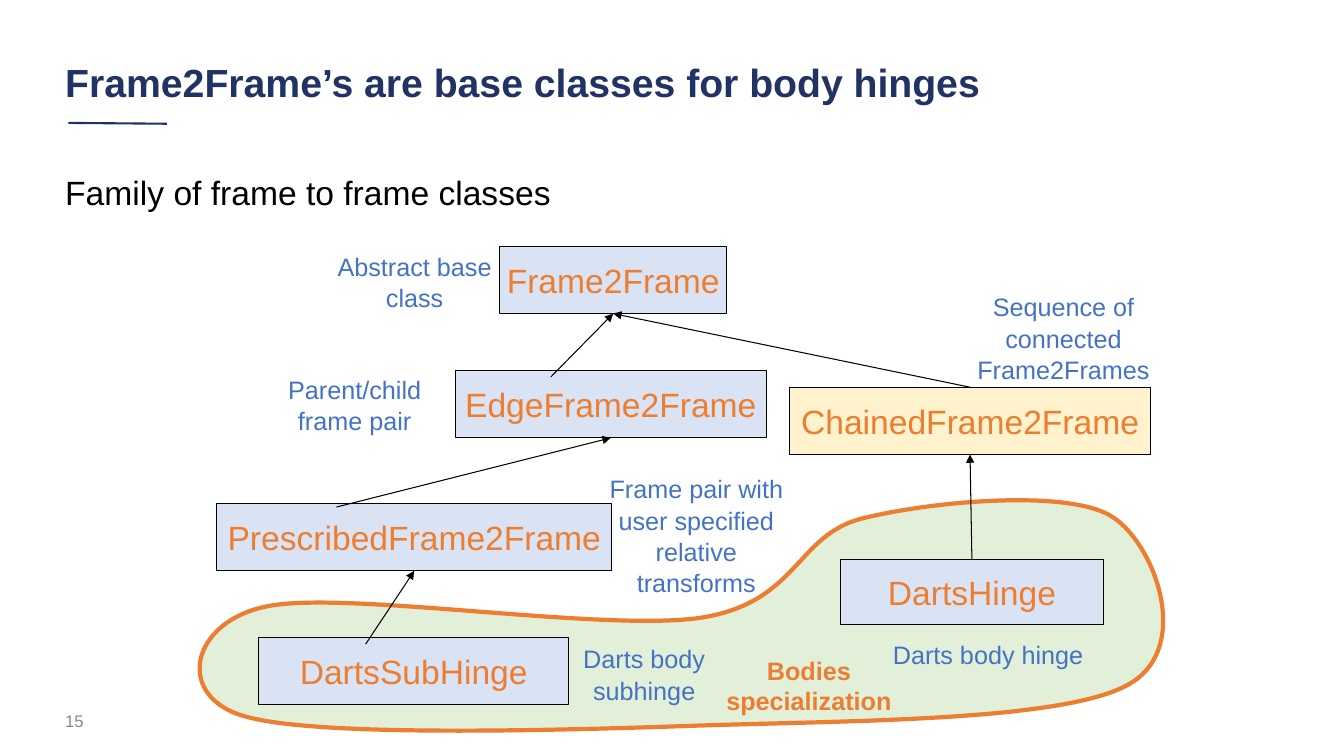
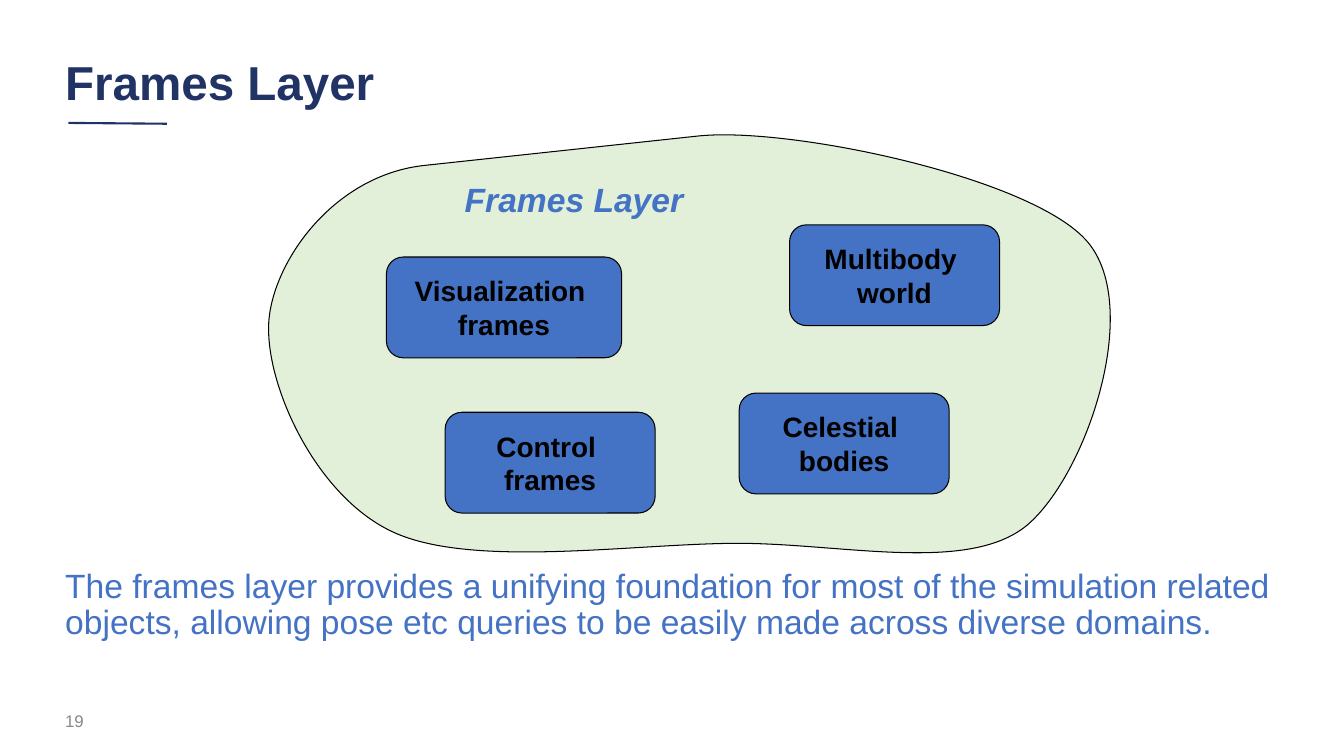
from lxml import etree
from pptx import Presentation
from pptx.dml.color import RGBColor
from pptx.enum import shapes, text
from pptx.oxml import ns
from pptx.util import Pt

NAVY = RGBColor(0x21, 0x32, 0x65)
BLUE = RGBColor(0x44, 0x72, 0xC4)
PALE_BLUE = RGBColor(0xDA, 0xE3, 0xF3)
PALE_YELLOW = RGBColor(0xFF, 0xF2, 0xCC)
PALE_GREEN = RGBColor(0xE2, 0xF0, 0xD9)
ORANGE = RGBColor(0xED, 0x7D, 0x31)
GREY = RGBColor(0x88, 0x88, 0x88)
BLACK = RGBColor(0, 0, 0)
FONT = "Arial"
MARGIN = 39.4
TOP, BOTTOM = 0, 2

BODIES_BOUNDS = (142.6, 357.8, 688.3, 164.9)
BODIES_START = (189.4, 433.4)
BODIES_CURVES = [
    ((243.4, 421.2), (428.4, 451.4), (499.7, 441.4)),
    ((571, 430.6), (568.1, 381.6), (617, 370.1)),
    ((666.7, 357.8), (764.6, 349.2), (794.9, 369.4)),
    ((825.8, 389.5), (853.2, 465.8), (803.5, 490.3)),
    ((753.8, 515.5), (601.2, 514.8), (496.1, 518.4)),
    ((391.7, 522), (226.8, 526.3), (175.7, 511.9)),
    ((124.6, 498.2), (135.4, 444.9), BODIES_START),
]
LAYER_BOUNDS = (192.2, 95.8, 601.2, 298.8)
LAYER_START = (303.8, 118.1)
LAYER_CURVES = [
    ((239.8, 124.6), (196.6, 184.3), (192.2, 227.5)),
    ((187.9, 271.4), (223.9, 352.8), (279.4, 379.4)),
    ((334.8, 406.1), (447.8, 388.8), (523.4, 388.1)),
    ((599, 387.4), (691.2, 410.4), (733.7, 375.1)),
    ((776.2, 339.1), (816.5, 219.6), (776.9, 172.8)),
    ((738, 126.7), (563, 90), (498.2, 97.2)),
]


def write(frame, wording, size, color, bold=False, italic=False,
          align=text.PP_ALIGN.CENTER, spacing=1.0):
    frame.text = wording
    for paragraph in frame.paragraphs:
        paragraph.alignment = align
        paragraph.line_spacing = spacing
        paragraph.space_before = Pt(0)
        for run in paragraph.runs:
            run.font.name = FONT
            run.font.size = Pt(size)
            run.font.color.rgb = color
            run.font.bold = bold
            run.font.italic = italic


def paint(shape, fill, outline, weight=0.75):
    shape.shadow.inherit = False
    shape.fill.solid()
    shape.fill.fore_color.rgb = fill
    shape.line.color.rgb = outline
    shape.line.width = Pt(weight)


def place(part, left, top, width, height):
    part.left, part.top = Pt(left), Pt(top)
    part.width, part.height = Pt(width), Pt(height)


def frame_of(placeholder, anchor, bounds):
    place(placeholder, *bounds)
    frame = placeholder.text_frame
    frame.auto_size = text.MSO_AUTO_SIZE.NONE
    frame.vertical_anchor = anchor
    return frame


def add_line(slide, start, end, color, weight):
    line = slide.shapes.add_connector(
        shapes.MSO_CONNECTOR.STRAIGHT, *(Pt(v) for v in (*start, *end)))
    line.line.color.rgb = color
    line.line.width = Pt(weight)
    etree.SubElement(line._element.spPr, ns.qn("a:effectLst"))
    return line


def add_inheritance(slide, child, parent, start=None):
    arrow = add_line(slide, start or (0, 0), (0, 0), BLACK, 0.75)
    if start is None:
        arrow.begin_connect(child, TOP)
    arrow.end_connect(parent, BOTTOM)
    outline = arrow._element.spPr.find(ns.qn("a:ln"))
    etree.SubElement(outline, ns.qn("a:tailEnd"), type="triangle")


def add_note(slide, wording, left, top, width, height, size=18, color=BLUE,
             wrap=True, anchor=text.MSO_ANCHOR.TOP, **style):
    note = slide.shapes.add_textbox(Pt(left), Pt(top), Pt(width), Pt(height))
    note.text_frame.word_wrap = wrap
    note.text_frame.vertical_anchor = anchor
    write(note.text_frame, wording, size, color, **style)


def add_box(slide, preset, wording, left, top, width, height, fill, size,
            color, bold=False):
    box = slide.shapes.add_shape(preset, Pt(left), Pt(top), Pt(width), Pt(height))
    paint(box, fill, BLACK)
    box.text_frame.word_wrap = False
    box.text_frame.vertical_anchor = text.MSO_ANCHOR.MIDDLE
    write(box.text_frame, wording, size, color, bold)
    return box


def add_class(slide, name, left, top, width, height=48, fill=PALE_BLUE):
    return add_box(slide, shapes.MSO_SHAPE.RECTANGLE, name, left, top, width,
                   height, fill, 24, ORANGE)


def add_domain(slide, name, left, top, width=150):
    add_box(slide, shapes.MSO_SHAPE.ROUNDED_RECTANGLE, name, left, top, width,
            72, BLUE, 20, BLACK, bold=True)


def add_region(slide, bounds, start, curves, outline, weight):
    builder = slide.shapes.build_freeform(Pt(start[0]), Pt(start[1]))
    builder.add_line_segments(
        [(Pt(x), Pt(y)) for *_, (x, y) in curves], close=True)
    region = builder.convert_to_shape()
    place(region, *bounds)
    paint(region, PALE_GREEN, outline, weight)

    contour = next(region._element.iter(ns.qn("a:path")))
    for segment in list(contour):
        contour.remove(segment)
    contour.set("w", str(region.width))
    contour.set("h", str(region.height))
    for command, points in [("a:moveTo", [start]),
                            *(("a:cubicBezTo", curve) for curve in curves),
                            ("a:close", [])]:
        segment = etree.SubElement(contour, ns.qn(command))
        for x, y in points:
            etree.SubElement(segment, ns.qn("a:pt"),
                             x=str(Pt(x) - region.left),
                             y=str(Pt(y) - region.top))


def add_slide(deck, title, title_size, number, statement, statement_top,
              statement_height, statement_color):
    slide = deck.slides.add_slide(deck.slide_layouts[1])
    heading = frame_of(slide.shapes.title, text.MSO_ANCHOR.MIDDLE,
                       (MARGIN, 33.1, 800.6, 54.7))
    write(heading, title, title_size, NAVY, bold=True,
          align=text.PP_ALIGN.LEFT, spacing=0.9)
    body = frame_of(slide.placeholders[1], text.MSO_ANCHOR.TOP,
                    (MARGIN, statement_top, 881.3, statement_height))
    write(body, statement, 24, statement_color, align=text.PP_ALIGN.LEFT,
          spacing=0.9)
    for paragraph in body.paragraphs:
        properties = paragraph._p.get_or_add_pPr()
        properties.set("marL", "0")
        properties.set("indent", "0")
        etree.SubElement(properties, ns.qn("a:buNone"))
    add_line(slide, (48.8, 87.8), (119.3, 88.4), NAVY, 1.5)
    add_note(slide, number, MARGIN, 500.4, 216, 28.8, 12, GREY,
             anchor=text.MSO_ANCHOR.MIDDLE, align=text.PP_ALIGN.LEFT)
    return slide


def build_hinge_classes(deck):
    slide = add_slide(deck, "Frame2Frame’s are base classes for body hinges",
                      28, "15", "Family of frame to frame classes",
                      122.4, 342.7, BLACK)
    add_region(slide, BODIES_BOUNDS, BODIES_START, BODIES_CURVES, ORANGE, 3)

    base = add_class(slide, "Frame2Frame", 357, 176, 162)
    edge = add_class(slide, "EdgeFrame2Frame", 325.4, 264.8, 221.8)
    prescribed = add_class(slide, "PrescribedFrame2Frame", 154.8, 359.8, 282.2)
    subhinge = add_class(slide, "DartsSubHinge", 184.6, 455.3, 221.8)
    hinge = add_class(slide, "DartsHinge", 600.3, 399.6, 187.9, 46.8)
    chained = add_class(slide, "ChainedFrame2Frame", 564, 276.6, 257.8,
                        fill=PALE_YELLOW)

    for child, parent, start in [
        (edge, base, (393.4, 269.3)),
        (prescribed, edge, (240.3, 362.2)),
        (subhinge, prescribed, (261.2, 460.1)),
        (hinge, chained, None),
        (chained, base, None),
    ]:
        add_inheritance(slide, child, parent, start)

    for wording, left, top, width, height in [
        ("Abstract base class", 225.7, 175, 141, 51),
        ("Parent/child frame pair", 182.9, 262.8, 141, 51),
        ("Frame pair with user specified relative transforms",
         422.9, 333.8, 149, 96.5),
        ("Sequence of connected Frame2Frames", 689.2, 203.8, 141, 73.4),
        ("Darts body hinge", 623.7, 452.2, 164.2, 28),
        ("Darts body subhinge", 403.2, 455.2, 113.8, 51),
    ]:
        add_note(slide, wording, left, top, width, height, spacing=1.04)
    add_note(slide, "Bodies specialization", 500.1, 464.4, 155.5, 51,
             color=ORANGE, bold=True)


def build_frames_layer(deck):
    slide = add_slide(
        deck, "Frames Layer", 34, "19",
        "The frames layer provides a unifying foundation for most of the "
        "simulation related objects, allowing pose etc queries to be easily "
        "made across diverse domains.", 403.2, 109.4, BLUE)
    add_region(slide, LAYER_BOUNDS, LAYER_START, LAYER_CURVES, BLACK, 0.75)
    add_domain(slide, "Celestial \nbodies", 528, 280.8)
    add_domain(slide, "Multibody \nworld", 564, 160.6)
    add_domain(slide, "Control \nframes", 318, 294.5)
    add_domain(slide, "Visualization \nframes", 276, 183.6, 168)
    add_note(slide, "Frames Layer", 324, 124.6, 172, 36, 24, wrap=False,
             bold=True, italic=True)


def main():
    deck = Presentation()
    deck.slide_width, deck.slide_height = Pt(960), Pt(540)
    build_hinge_classes(deck)
    build_frames_layer(deck)
    deck.save("out.pptx")


if __name__ == "__main__":
    main()
